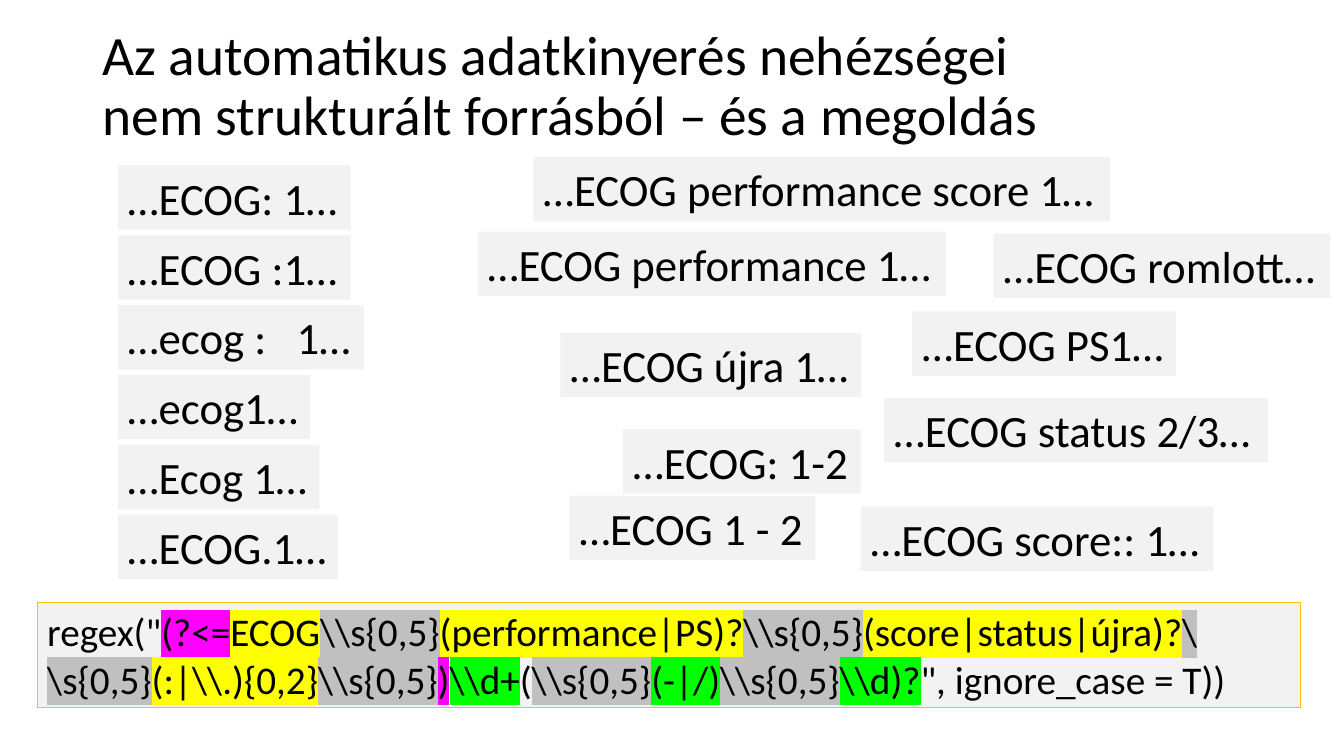
from lxml.etree import SubElement
from pptx import Presentation
from pptx.dml.color import RGBColor
from pptx.enum.text import MSO_ANCHOR, MSO_AUTO_SIZE, PP_ALIGN
from pptx.oxml.ns import qn
from pptx.util import Cm, Pt

BLACK = RGBColor(0x00, 0x00, 0x00)
LIGHT_GRAY = RGBColor(0xF2, 0xF2, 0xF2)
GOLD = RGBColor(0xFF, 0xC0, 0x00)
MAGENTA = RGBColor(0xFF, 0x00, 0xFF)
YELLOW = RGBColor(0xFF, 0xFF, 0x00)
SILVER = RGBColor(0xC0, 0xC0, 0xC0)
GREEN = RGBColor(0x00, 0xFF, 0x00)

NOTE_HEIGHT = 1.62
SPACING = (r"\\s{0,5}", SILVER)

SPELLINGS = [
    ("…ECOG: 1…", 5.87),
    ("…ECOG :1…", 5.87),
    ("…ecog :   1…", 6.2),
    ("…ecog1…", 4.85),
    ("…Ecog 1…", 5.08),
    ("…ECOG.1…", 5.54),
]

WORDINGS = [
    ("…ECOG performance score 1…", 1.4, 0, 14.53),
    ("…ECOG performance 1…", 0, 1.88, 11.79),
    ("…ECOG romlott…", 13, 1.93, 8.48),
    ("…ECOG PS1…", 10.95, 3.89, 6.65),
    ("…ECOG újra 1…", 2.08, 4.42, 7.59),
    ("…ECOG status 2/3…", 10.24, 6.07, 9.68),
    ("…ECOG: 1-2", 3.66, 6.86, 5.99),
    ("…ECOG 1 - 2", 2.31, 8.53, 6.2),
    ("…ECOG score:: 1…", 9.65, 8.81, 8.89),
]

REGEX_PARTS = [
    ('regex("', None),
    ("(?<=", MAGENTA),
    ("ECOG", YELLOW),
    SPACING,
    ("(performance|PS)?", YELLOW),
    SPACING,
    ("(score|status|újra)?", YELLOW),
    SPACING,
    (r"(:|\\.){0,2}", YELLOW),
    SPACING,
    (")", MAGENTA),
    (r"\\d+", GREEN),
    ("(", None),
    SPACING,
    ("(-|/)", GREEN),
    SPACING,
    (r"\\d)?", GREEN),
    ('", ignore_case = T))', None),
]


def write(paragraph, text, size=32, color=BLACK, highlight=None):
    for index, line in enumerate(text.split("\n")):
        if index:
            paragraph.add_line_break()
        run = paragraph.add_run()
        run.text = line
        run.font.size = Pt(size)
        run.font.color.rgb = color
        run.font.name = "Calibri"
        if highlight is not None:
            properties = run.font._element
            marker = SubElement(properties, qn("a:highlight"))
            SubElement(marker, qn("a:srgbClr")).set("val", str(highlight))
            properties.find(qn("a:latin")).addprevious(marker)


def add_panel(slide, left, top, width, height, wrap=False):
    panel = slide.shapes.add_textbox(Cm(left), Cm(top), Cm(width), Cm(height))
    panel.fill.solid()
    panel.fill.fore_color.rgb = LIGHT_GRAY
    panel.text_frame.word_wrap = wrap
    panel.text_frame.auto_size = MSO_AUTO_SIZE.SHAPE_TO_FIT_TEXT
    return panel


def add_note(slide, text, left, top, width):
    note = add_panel(slide, left, top, width, NOTE_HEIGHT)
    write(note.text_frame.paragraphs[0], text)


def place_title(slide, left, top, width, height):
    title = slide.shapes.title
    title.left, title.top = Cm(left), Cm(top)
    title.width, title.height = Cm(width), Cm(height)
    title.text_frame.vertical_anchor = MSO_ANCHOR.MIDDLE
    heading = title.text_frame.paragraphs[0]
    heading.alignment = PP_ALIGN.LEFT
    heading.line_spacing = 0.9
    write(
        heading,
        "Az automatikus adatkinyerés nehézségei \n"
        "nem strukturált forrásból – és a megoldás",
        size=39.6,
    )


def place_spellings(slide, left, top, height):
    step = (height - NOTE_HEIGHT) / (len(SPELLINGS) - 1)
    for row, (text, width) in enumerate(SPELLINGS):
        add_note(slide, text, left, top + row * step, width)


def place_wordings(slide, left, top):
    for text, across, down, width in WORDINGS:
        add_note(slide, text, left + across, top + down, width)


def place_regex(slide, left, top, width, height):
    regex = add_panel(slide, left, top, width, height, wrap=True)
    regex.line.color.rgb = GOLD
    regex.line.width = Pt(0.75)
    for text, highlight in REGEX_PARTS:
        write(regex.text_frame.paragraphs[0], text, size=28, highlight=highlight)


def main():
    deck = Presentation()
    deck.slide_width, deck.slide_height = Cm(33.87), Cm(19.05)
    slide = deck.slides.add_slide(deck.slide_layouts[5])
    place_title(slide, 2.33, 0.53, 29.21, 3.35)
    place_regex(slide, 0.94, 15.19, 31.83, 2.64)
    place_spellings(slide, 2.97, 4.17, 10.42)
    place_wordings(slide, 12.04, 3.96)
    deck.save("out.pptx")


if __name__ == "__main__":
    main()
